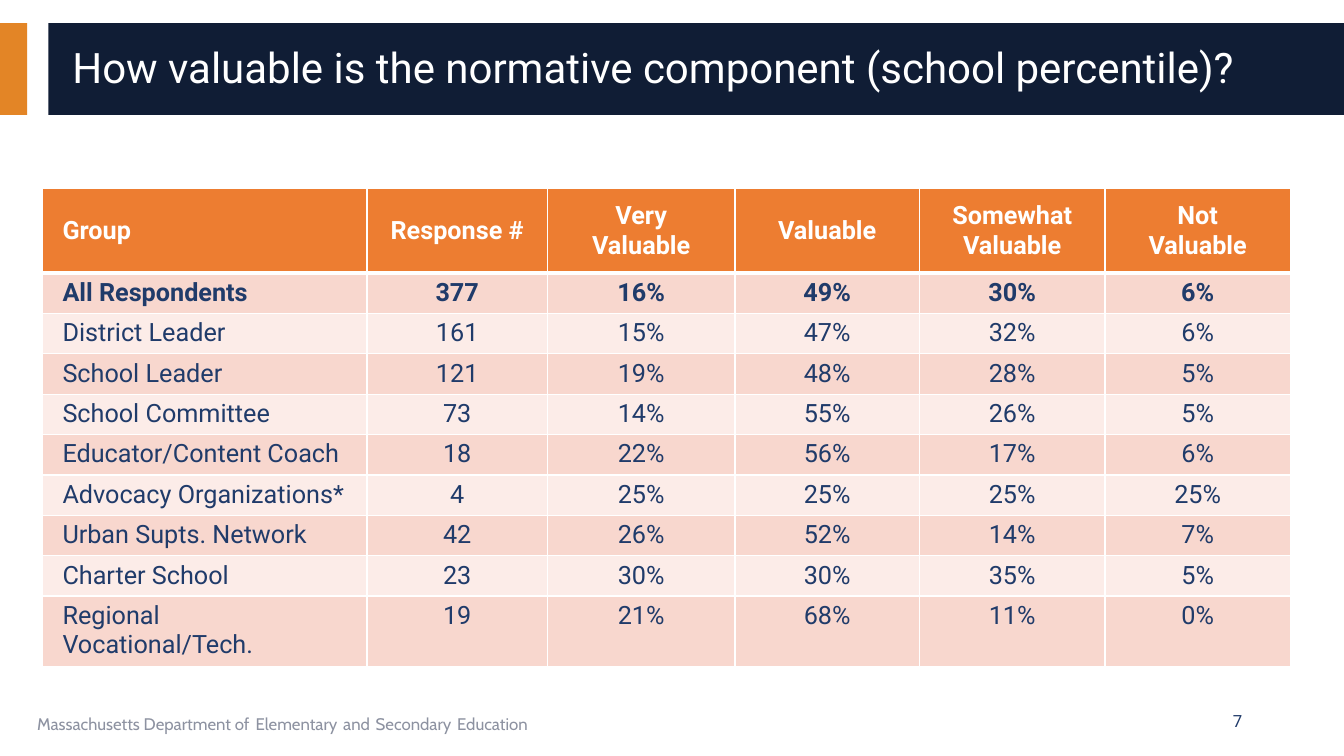
from dataclasses import dataclass

from lxml import etree
from pptx import Presentation
from pptx.dml.color import RGBColor
from pptx.enum.shapes import MSO_SHAPE
from pptx.enum.text import MSO_ANCHOR, PP_ALIGN
from pptx.oxml.ns import qn
from pptx.util import Inches, Pt

RECTANGLE = MSO_SHAPE.RECTANGLE
TOP, MIDDLE = MSO_ANCHOR.TOP, MSO_ANCHOR.MIDDLE
LEFT, CENTER, RIGHT = PP_ALIGN.LEFT, PP_ALIGN.CENTER, PP_ALIGN.RIGHT

TITLE = "How valuable is the normative component (school percentile)?"
FOOTER = ["Massachusetts Department of", "Elementary", "and", "Secondary", "Education"]
HEADERS = ["Group", "Response #", "Very Valuable", "Valuable", "Somewhat\nValuable", "Not\nValuable"]
RESPONSES = [
    ("All Respondents", 377, 16, 49, 30, 6),
    ("District Leader", 161, 15, 47, 32, 6),
    ("School Leader", 121, 19, 48, 28, 5),
    ("School Committee", 73, 14, 55, 26, 5),
    ("Educator/Content Coach", 18, 22, 56, 17, 6),
    ("Advocacy Organizations*", 4, 25, 25, 25, 25),
    ("Urban Supts. Network", 42, 26, 52, 14, 7),
    ("Charter School", 23, 30, 30, 35, 5),
    ("Regional Vocational/Tech.", 19, 21, 68, 11, 0),
]
COLUMN_WIDTHS = [3.22, 1.79, 1.86, 1.83, 1.84, 1.84]
ROW_HEIGHTS = [0.84] + [0.4] * 8 + [0.69]


@dataclass(frozen=True)
class Theme:
    accent: str = "E38526"
    banner: str = "101D35"
    white: str = "FFFFFF"
    text: str = "203B6A"
    muted: str = "8D92A1"
    header: str = "ED7D31"
    bands: tuple = ("F8D7CE", "FCECE8")
    body_font: str = "Roboto"
    footer_font: str = "Cabin"
    title_size: int = 30
    table_size: int = 18
    small_size: int = 12


def write_text(paragraph, text, *, font, size, color, bold=False, alignment=LEFT):
    paragraph.alignment = alignment
    run = paragraph.add_run()
    run.text = text
    run.font.name = font
    run.font.size = Pt(size)
    run.font.bold = bold
    run.font.color.rgb = RGBColor.from_string(color)


class SlideBuilder:
    def __init__(self, slide, theme):
        self.slide = slide
        self.theme = theme

    def add_bar(self, left, top, width, height, color):
        shape = self.slide.shapes.add_shape(
            RECTANGLE, Inches(left), Inches(top), Inches(width), Inches(height))
        shape.shadow.inherit = False
        shape.fill.solid()
        shape.fill.fore_color.rgb = RGBColor.from_string(color)
        shape.line.fill.background()

    def add_text_box(self, left, top, width, height, anchor=TOP):
        shape = self.slide.shapes.add_textbox(
            Inches(left), Inches(top), Inches(width), Inches(height))
        shape.text_frame.word_wrap = True
        shape.text_frame.vertical_anchor = anchor
        return shape.text_frame.paragraphs[0]

    def add_table(self, left, top, column_widths, row_heights, rows):
        shape = self.slide.shapes.add_table(
            len(rows), len(column_widths), Inches(left), Inches(top),
            Inches(sum(column_widths)), Inches(sum(row_heights)))
        table = shape.table
        for column, width in zip(table.columns, column_widths):
            column.width = Inches(width)
        for row, height in zip(table.rows, row_heights):
            row.height = Inches(height)
        for row_index, values in enumerate(rows):
            for column_index, value in enumerate(values):
                self.fill_cell(table.cell(row_index, column_index), value, row_index, column_index)

    def fill_cell(self, cell, value, row_index, column_index):
        theme = self.theme
        is_header = row_index == 0
        cell.margin_left = cell.margin_right = Inches(0.2)
        cell.margin_top = cell.margin_bottom = Inches(0.05)
        cell.vertical_anchor = MIDDLE if is_header else TOP
        for line_index, line in enumerate(value.split("\n")):
            frame = cell.text_frame
            paragraph = frame.add_paragraph() if line_index else frame.paragraphs[0]
            write_text(paragraph, line, font=theme.body_font, size=theme.table_size,
                       color=theme.white if is_header else theme.text, bold=row_index < 2,
                       alignment=CENTER if column_index else LEFT)
        self.add_borders(cell, top=3 if row_index == 1 else 1, bottom=3 if is_header else 1)
        cell.fill.solid()
        color = theme.header if is_header else theme.bands[(row_index - 1) % 2]
        cell.fill.fore_color.rgb = RGBColor.from_string(color)

    def add_borders(self, cell, top, bottom):
        properties = cell._tc.get_or_add_tcPr()
        for side, width in (("L", 1), ("R", 1), ("T", top), ("B", bottom)):
            border = etree.SubElement(properties, qn(f"a:ln{side}"), w=str(Pt(width)))
            fill = etree.SubElement(border, qn("a:solidFill"))
            etree.SubElement(fill, qn("a:srgbClr"), val=self.theme.white)


def main():
    presentation = Presentation()
    presentation.slide_width = Inches(13.33)
    presentation.slide_height = Inches(7.5)
    theme = Theme()
    builder = SlideBuilder(presentation.slides.add_slide(presentation.slide_layouts[6]), theme)

    builder.add_bar(0, 0.23, 0.27, 0.91, theme.accent)
    builder.add_bar(0.48, 0.23, 12.85, 0.91, theme.banner)

    footer = builder.add_text_box(0.27, 6.95, 8.44, 0.4)
    for index, words in enumerate(FOOTER):
        if index:
            write_text(footer, " ", font=theme.footer_font, size=theme.table_size, color=theme.text)
        write_text(footer, words, font=theme.footer_font, size=theme.small_size, color=theme.muted)

    title = builder.add_text_box(0.62, 0.32, 12.44, 0.74, MIDDLE)
    title.line_spacing = 0.9
    write_text(title, TITLE, font=theme.body_font, size=theme.title_size, color=theme.white)

    rows = [HEADERS] + [
        [group, str(count)] + [f"{share}%" for share in shares]
        for group, count, *shares in RESPONSES
    ]
    builder.add_table(0.42, 1.87, COLUMN_WIDTHS, ROW_HEIGHTS, rows)

    number = builder.add_text_box(9.42, 6.95, 3, 0.4, MIDDLE)
    write_text(number, "7", font=theme.body_font, size=theme.small_size,
               color=theme.text, alignment=RIGHT)

    presentation.save("out.pptx")


if __name__ == "__main__":
    main()
